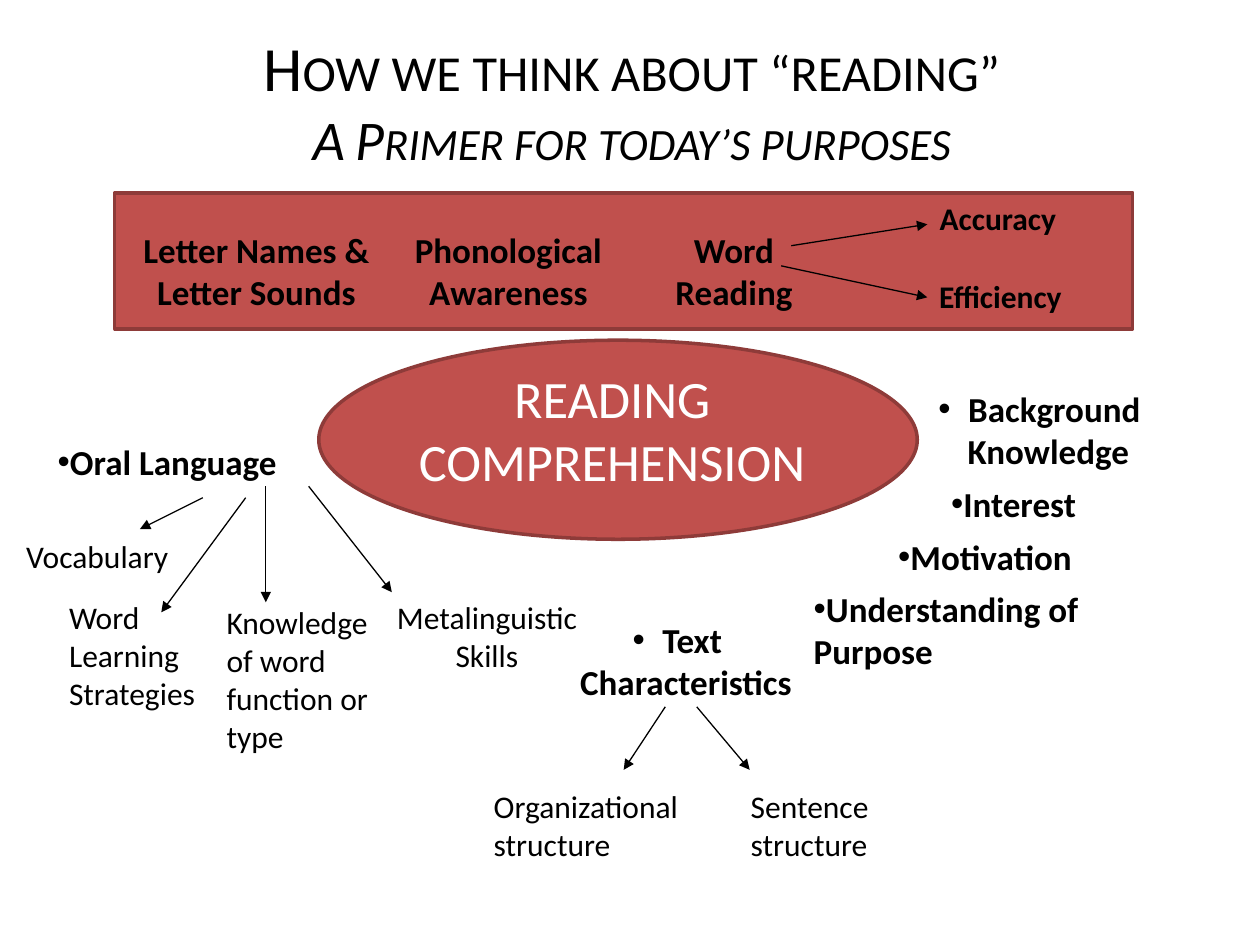
from dataclasses import dataclass
from lxml.etree import SubElement
from pptx import Presentation
from pptx.dml.color import RGBColor
from pptx.enum.shapes import MSO_CONNECTOR, MSO_SHAPE
from pptx.enum.text import MSO_ANCHOR, PP_ALIGN
from pptx.oxml.ns import qn
from pptx.util import Inches, Pt


@dataclass(frozen=True)
class Theme:
    font: str = "Calibri"
    red: RGBColor = RGBColor(0xC0, 0x50, 0x4D)
    edge: RGBColor = RGBColor(0x8E, 0x3B, 0x39)
    ink: RGBColor = RGBColor(0, 0, 0)
    white: RGBColor = RGBColor(255, 255, 255)
    title: int = 36
    sub: int = 32
    hub: int = 30
    head: int = 20
    leaf: int = 18


theme = Theme()
deck = Presentation()
deck.slide_width, deck.slide_height = Inches(10), Inches(7.5)
slide = deck.slides.add_slide(deck.slide_layouts[6])
left, mid = PP_ALIGN.LEFT, PP_ALIGN.CENTER


def add_text(area, lines, size, bold=False, align=left, dot=False,
             color=theme.ink, anchor=MSO_ANCHOR.TOP, wrap=True):
    box = slide.shapes.add_textbox(*[Inches(n) for n in area])
    frame = box.text_frame
    frame.word_wrap = wrap
    frame.vertical_anchor = anchor
    runs = []
    for i, line in enumerate(lines):
        para = frame.paragraphs[0] if i == 0 else frame.add_paragraph()
        para.alignment = align
        if dot:
            props = para._p.get_or_add_pPr()
            SubElement(props, qn("a:buFont"), typeface="Arial")
            SubElement(props, qn("a:buChar"), char="•")
        run = para.add_run()
        run.text = line
        run.font.name = theme.font
        run.font.size = Pt(size)
        run.font.bold = bold
        run.font.color.rgb = color
        runs.append(run)
    return runs


# Red band and central ellipse
for kind, area in [
    (MSO_SHAPE.RECTANGLE, (0.91, 1.53, 8.08, 1.08)),
    (MSO_SHAPE.OVAL, (2.53, 2.7, 4.75, 1.58)),
]:
    shape = slide.shapes.add_shape(kind, *[Inches(n) for n in area])
    shape.shadow.inherit = False
    shape.fill.solid()
    shape.fill.fore_color.rgb = theme.red
    shape.line.color.rgb = theme.edge
    shape.line.width = Pt(2)

add_text((2.86, 2.86, 4, 1.1), ["READING COMPREHENSION"], theme.hub,
         align=mid, color=theme.white)

# Title in small capitals
title, sub = add_text(
    (0.91, 0.18, 8.21, 1.25),
    ["How we think about “reading”", "A Primer for today’s purposes"],
    theme.title, align=mid)
sub.font.size = Pt(theme.sub)
sub.font.italic = True
for run in (title, sub):
    run.font._element.set("cap", "small")

# Skills in the band
for x, width, lines in [
    (0.95, 2.17, ["Letter Names & Letter Sounds"]),
    (2.95, 2.17, ["Phonological", "Awareness"]),
    (4.95, 1.75, ["Word Reading"]),
]:
    add_text((x, 1.86, width, 0.58), lines, theme.head, True, mid,
             anchor=MSO_ANCHOR.MIDDLE)
add_text((7.36, 1.53, 2.33, 0.4), ["Accuracy"], theme.leaf, True)
add_text((6.73, 2.06, 2.42, 0.58), ["Efficiency"], theme.leaf, True, mid,
         anchor=MSO_ANCHOR.MIDDLE)

# Bulleted factors around the ellipse
for area, words, align in [
    ((0.36, 3.45, 2.5, 0.43), "Oral Language", left),
    ((7.11, 3.03, 2.42, 0.77), "Background Knowledge", mid),
    ((7.45, 3.78, 2, 0.43), "Interest", left),
    ((7.03, 4.2, 2.08, 0.43), "Motivation", left),
    ((6.36, 4.61, 2.67, 0.77), "Understanding of Purpose", left),
    ((4.28, 4.86, 2.33, 0.77), "Text Characteristics", mid),
]:
    add_text(area, [words], theme.head, True, align, dot=True)

# Details under oral language and text characteristics
add_text((0.11, 4.21, 1.34, 0.4), ["Vocabulary"], theme.leaf, wrap=False)
for area, words, align in [
    ((0.45, 4.7, 1.5, 1), "Word Learning Strategies", left),
    ((1.7, 4.74, 1.5, 1.3), "Knowledge of word function or type", left),
    ((2.78, 4.7, 2.17, 0.7), "Metalinguistic Skills", mid),
    ((3.82, 6.2, 1.88, 0.7), "Organizational structure", left),
    ((5.86, 6.2, 1.33, 0.7), "Sentence structure", left),
]:
    add_text(area, [words], theme.leaf, align=align)

# Arrows from each idea to its parts
for ends in [
    (6.28, 1.95, 7.36, 1.78),
    (6.2, 2.11, 7.36, 2.36),
    (1.61, 3.95, 1.11, 4.2),
    (1.95, 3.95, 1.28, 4.86),
    (2.11, 3.86, 2.11, 4.78),
    (2.45, 3.86, 3.11, 4.7),
    (5.28, 5.61, 4.95, 6.11),
    (5.53, 5.61, 5.95, 6.11),
]:
    arrow = slide.shapes.add_connector(
        MSO_CONNECTOR.STRAIGHT, *[Inches(n) for n in ends])
    arrow.line.color.rgb = theme.ink
    arrow.line.width = Pt(0.75)
    SubElement(arrow.line._get_or_add_ln(), qn("a:tailEnd"), type="triangle")
    SubElement(arrow._element.spPr, qn("a:effectLst"))

deck.save("out.pptx")
